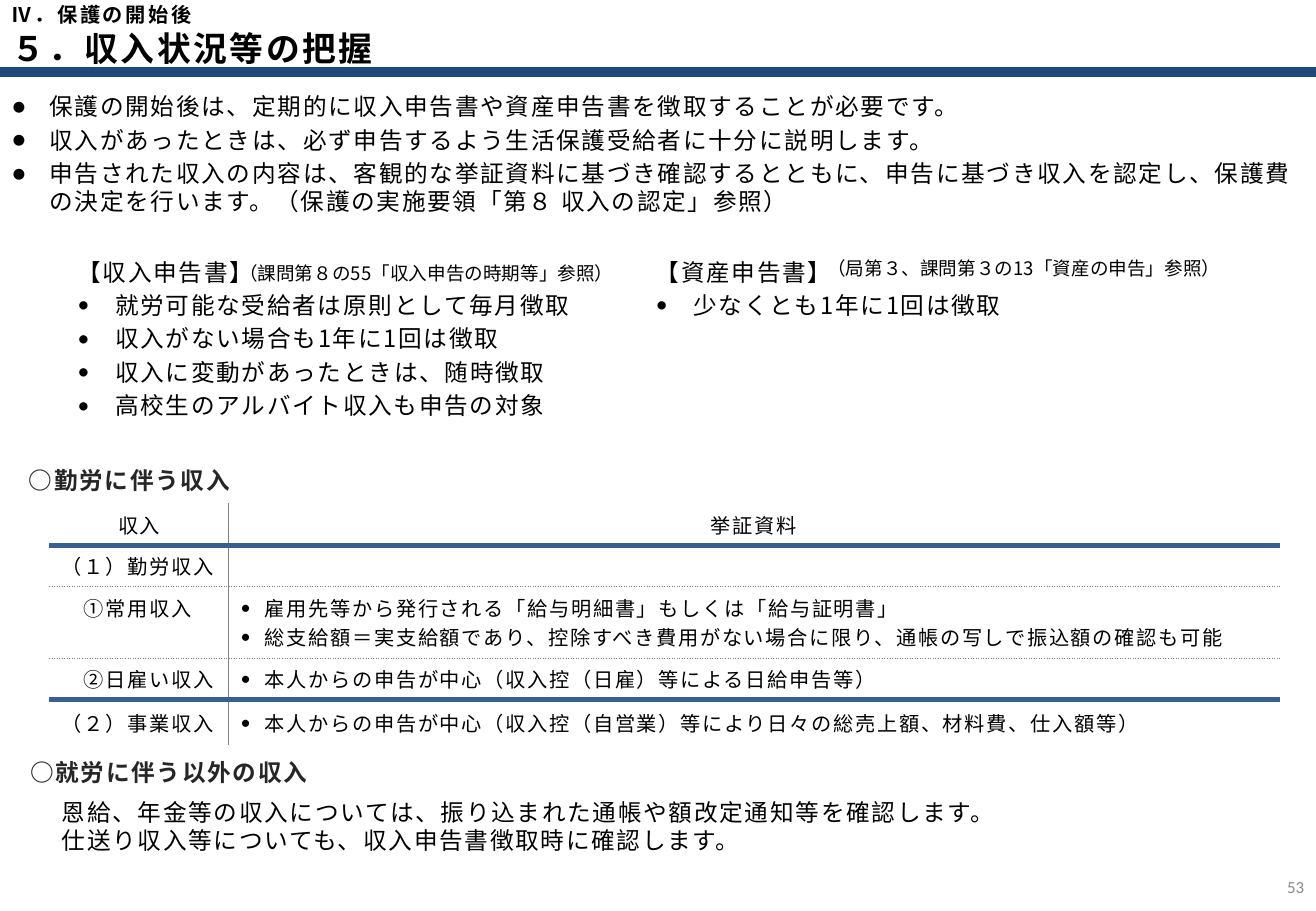
from dataclasses import dataclass

import lxml.etree
import pptx
import pptx.dml.color
import pptx.enum.shapes
import pptx.enum.text
import pptx.oxml.ns
import pptx.util

Align = pptx.enum.text.PP_ALIGN
Anchor = pptx.enum.text.MSO_ANCHOR
qn = pptx.oxml.ns.qn


@dataclass(frozen=True)
class Theme:
    font: str = "Noto Sans CJK JP"
    latin_font: str = "Calibri"
    black: str = "000000"
    heading: str = "262626"
    muted: str = "898989"
    band: str = "1F497D"
    heavy: str = "376092"
    thin: str = "808080"
    title_size: float = 20
    body_size: float = 14
    table_size: float = 12
    reference_size: float = 11
    number_size: float = 10
    line_factor: float = 1.2


class SlideBuilder:
    """Places elements on a grid whose columns and rows are 0.1 inch."""

    CELL = 0.1
    COLUMNS, ROWS = 108.3, 75

    def __init__(self, theme):
        self.theme = theme
        self.presentation = pptx.Presentation()
        self.presentation.slide_width = self.length(self.COLUMNS)
        self.presentation.slide_height = self.length(self.ROWS)
        self.slide = self.presentation.slides.add_slide(self.presentation.slide_layouts[6])

    def length(self, cells):
        return pptx.util.Inches(cells * self.CELL)

    def run(self, paragraph, text, size, color=None, bold=False, spacing=1, font=None):
        run = paragraph.add_run()
        run.text = text
        run.font.size = pptx.util.Pt(size)
        run.font.bold = bold
        run.font.name = font or self.theme.font
        run.font.color.rgb = pptx.dml.color.RGBColor.from_string(color or self.theme.black)
        properties = run._r.get_or_add_rPr()
        properties.set("spc", str(int(spacing * 100)))
        lxml.etree.SubElement(properties, qn("a:ea"), typeface=font or self.theme.font)

    def bullet(self, paragraph, character, indent):
        properties = paragraph._p.get_or_add_pPr()
        properties.set("marL", str(self.length(indent)))
        properties.set("indent", str(-self.length(indent)))
        lxml.etree.SubElement(properties, qn("a:buFont"), typeface=self.theme.latin_font)
        lxml.etree.SubElement(properties, qn("a:buChar"), char=character)

    def paragraphs(self, frame, texts, size, align=Align.LEFT, before=0, tight=False,
                   marks=(), indent=3.1, **style):
        for index, text in enumerate(texts):
            paragraph = frame.paragraphs[0] if index == 0 else frame.add_paragraph()
            paragraph.alignment = align
            paragraph.space_before = pptx.util.Pt(before)
            if tight:
                paragraph.line_spacing = pptx.util.Pt(size * self.theme.line_factor)
            if index < len(marks) and marks[index]:
                self.bullet(paragraph, marks[index], indent)
            self.run(paragraph, text, size, **style)

    def text(self, box, texts, size, anchor=Anchor.TOP, **style):
        shape = self.slide.shapes.add_textbox(*map(self.length, box))
        shape.text_frame.word_wrap = True
        shape.text_frame.vertical_anchor = anchor
        self.paragraphs(shape.text_frame, texts, size, **style)

    def rule(self, row, color, width):
        line = self.slide.shapes.add_connector(
            pptx.enum.shapes.MSO_CONNECTOR.STRAIGHT,
            0, self.length(row), self.length(self.COLUMNS), self.length(row))
        line.line.color.rgb = pptx.dml.color.RGBColor.from_string(color)
        line.line.width = pptx.util.Pt(width)
        lxml.etree.SubElement(line._element.spPr, qn("a:effectLst"))

    def border(self, cell, side, color, width, dash="solid"):
        line = lxml.etree.SubElement(cell._tc.get_or_add_tcPr(), qn("a:ln" + side),
                                     w=str(pptx.util.Pt(width)))
        fill = lxml.etree.SubElement(line, qn("a:solidFill"))
        lxml.etree.SubElement(fill, qn("a:srgbClr"), val=color)
        lxml.etree.SubElement(line, qn("a:prstDash"), val=dash)

    def table(self, box, widths, heights, rows, dividers):
        """Fill a two-column table; dividers holds the line below each row but the last."""
        table = self.slide.shapes.add_table(len(rows), len(widths), *map(self.length, box)).table
        table.first_row = table.horz_banding = False
        for column, width in zip(table.columns, widths):
            column.width = self.length(width)
        for index, (row, height) in enumerate(zip(rows, heights)):
            table.rows[index].height = self.length(height)
            for number, texts in enumerate(row):
                cell = table.cell(index, number)
                top_aligned = number == 0 and len(row[1]) > 1
                cell.vertical_anchor = Anchor.TOP if top_aligned else Anchor.MIDDLE
                self.border(cell, "L" if number else "R", self.theme.thin, 1)
                if index > 0:
                    self.border(cell, "T", *dividers[index - 1])
                if index < len(dividers):
                    self.border(cell, "B", *dividers[index])
                cell.fill.background()
                header = index == 0
                marks = "•" * len(texts) if number and not header else ""
                self.paragraphs(cell.text_frame, texts, self.theme.table_size, marks=marks,
                                indent=2, align=Align.CENTER if header else Align.LEFT)
                if not texts:
                    lxml.etree.SubElement(cell.text_frame.paragraphs[0]._p, qn("a:endParaRPr"),
                                          sz=str(int(self.theme.table_size * 100)))


def main():
    theme = Theme()
    builder = SlideBuilder(theme)

    # Title band
    builder.rule(5.9, theme.band, 6)
    title_style = dict(anchor=Anchor.MIDDLE, bold=True, spacing=1.5)
    builder.text((0, 0.1, 90.7, 2.1), ["Ⅳ．保護の開始後"], theme.table_size, **title_style)
    builder.text((0, 2, 90.7, 3.9), ["５．収入状況等の把握"], theme.title_size, **title_style)

    # Main points
    builder.text((0, 7.1, builder.COLUMNS, 11.6), [
        "保護の開始後は、定期的に収入申告書や資産申告書を徴取することが必要です。",
        "収入があったときは、必ず申告するよう生活保護受給者に十分に説明します。",
        "申告された収入の内容は、客観的な挙証資料に基づき確認するとともに、申告に基づき"
        "収入を認定し、保護費の決定を行います。（保護の実施要領「第８ 収入の認定」参照）",
    ], theme.body_size, before=3, tight=True, marks="●●●")

    # The two kinds of report, each with its reference
    reports = [
        (5.4, ["【収入申告書】", "就労可能な受給者は原則として毎月徴取", "収入がない場合も1年に1回は徴取",
               "収入に変動があったときは、随時徴取", "高校生のアルバイト収入も申告の対象"],
         (18.7, 21.1, 34.4, 2.9), "（課問第８の55「収入申告の時期等」参照）"),
        (53, ["【資産申告書】", "少なくとも1年に1回は徴取"],
         (67.1, 20.7, 35.9, 2.9), "（局第３、課問第３の13「資産の申告」参照）"),
    ]
    for left, lines, reference_box, reference in reports:
        builder.text((left, 20.7, 42.6, 14.2), lines, theme.body_size, before=3, tight=True,
                     marks=[""] + ["•"] * (len(lines) - 1))
        builder.text(reference_box, [reference], theme.reference_size, tight=True, spacing=0)

    # Section headings
    for left, top, heading in [(1.4, 37.5, "○勤労に伴う収入"), (1.5, 61.5, "○就労に伴う以外の収入")]:
        builder.text((left, top, 33.4, 4.1), [heading], theme.body_size,
                     anchor=Anchor.MIDDLE, bold=True, color=theme.heading)

    # Earned income and its evidence
    heavy = (theme.heavy, 3)
    dotted = (theme.thin, 1, "sysDot")
    builder.table((4.1, 41.5, 101.2, 19.9), (14.7, 86.5), (3.4, 3.4, 5.9, 3.4, 3.8), [
        (["収入"], ["挙証資料"]),
        (["（１）勤労収入"], []),
        (["　①常用収入"], [
            "雇用先等から発行される「給与明細書」もしくは「給与証明書」",
            "総支給額＝実支給額であり、控除すべき費用がない場合に限り、通帳の写しで振込額の確認も可能"]),
        (["　②日雇い収入"], ["本人からの申告が中心（収入控（日雇）等による日給申告等）"]),
        (["（２）事業収入"], ["本人からの申告が中心（収入控（自営業）等により日々の総売上額、材料費、仕入額等）"]),
    ], [heavy, dotted, dotted, heavy])

    # Other income
    builder.text((4.1, 65.2, 101.2, 5.7), [
        "恩給、年金等の収入については、振り込まれた通帳や額改定通知等を確認します。",
        "仕送り収入等についても、収入申告書徴取時に確認します。",
    ], theme.body_size, tight=True)

    # Page number
    builder.text((104.2, 71, 4.1, 4), ["53"], theme.number_size, anchor=Anchor.MIDDLE,
                 align=Align.RIGHT, color=theme.muted, spacing=0, font=theme.latin_font)

    builder.presentation.save("out.pptx")


if __name__ == "__main__":
    main()
